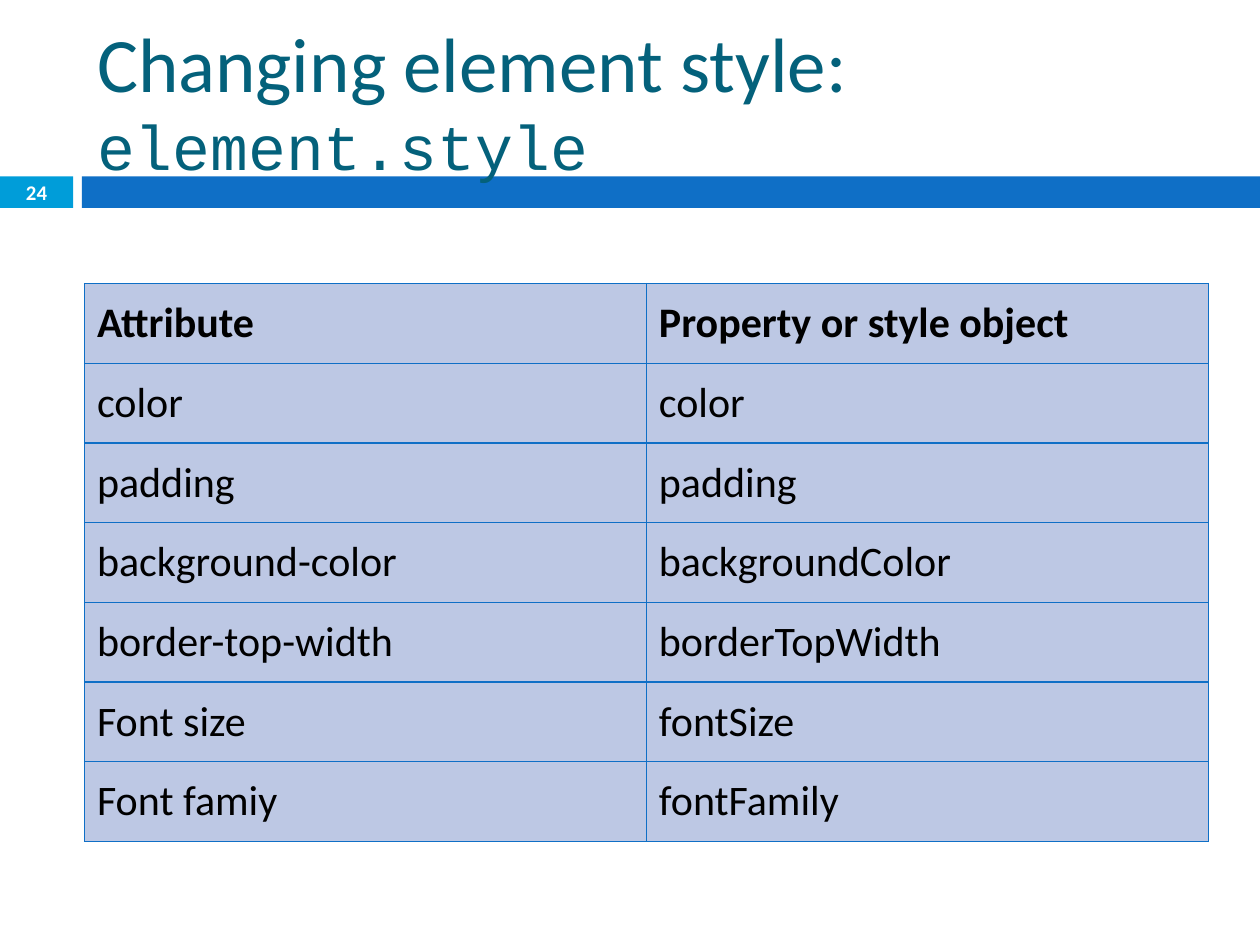
import lxml.etree
import pptx
import pptx.dml.color
import pptx.enum.shapes
import pptx.enum.text
import pptx.oxml.ns
import pptx.util

Inches = pptx.util.Inches
Pt = pptx.util.Pt
MIDDLE = pptx.enum.text.MSO_ANCHOR.MIDDLE

COLORS = {
    "title": "04617B",
    "number": "009DD9",
    "band": "0F6FC6",
    "cell": "BDC8E4",
    "text": "000000",
    "white": "FFFFFF",
}

STYLE_ROWS = [
    ("Attribute", "Property or style object"),
    ("color", "color"),
    ("padding", "padding"),
    ("background-color", "backgroundColor"),
    ("border-top-width", "borderTopWidth"),
    ("Font size", "fontSize"),
    ("Font famiy", "fontFamily"),
]


def rgb(name):
    return pptx.dml.color.RGBColor.from_string(COLORS[name])


def set_font(font, size, color, bold=False, face="Calibri"):
    font.name, font.size, font.bold = face, Pt(size), bold
    font.color.rgb = rgb(color)


def add_bar(slide, left, top, width, height, color):
    bar = slide.shapes.add_shape(
        pptx.enum.shapes.MSO_SHAPE.RECTANGLE, left, top, width, height)
    bar.shadow.inherit = False
    bar.fill.solid()
    bar.fill.fore_color.rgb = rgb(color)
    bar.line.fill.background()
    return bar


def add_band(slide, left, top, width, height):
    """Page number box, a gap, then the long bar."""
    number_width, bar_offset = Inches(0.58), Inches(0.65)
    number = add_bar(slide, left, top, number_width, height, "number")
    add_bar(slide, left + bar_offset, top, width - bar_offset, height, "band")

    frame = number.text_frame
    frame.margin_left = frame.margin_right = 0
    frame.margin_top = frame.margin_bottom = 0
    frame.vertical_anchor = MIDDLE
    paragraph = frame.paragraphs[0]
    paragraph.text = "24"
    paragraph.alignment = pptx.enum.text.PP_ALIGN.CENTER
    set_font(paragraph.font, 11.9, "white", bold=True)


def place_title(slide, left, top, width, height):
    title = slide.shapes.title
    title.left, title.top, title.width, title.height = left, top, width, height
    # The title overlaps the band, so it goes in front
    title.element.getparent().append(title.element)

    frame = title.text_frame
    frame.word_wrap = True
    frame.auto_size = pptx.enum.text.MSO_AUTO_SIZE.NONE
    frame.vertical_anchor = MIDDLE
    paragraph = frame.paragraphs[0]
    paragraph.alignment = pptx.enum.text.PP_ALIGN.LEFT
    for text, size, face in (("Changing element style: ", 44, "Calibri"),
                             ("element.style", 36, "Courier New")):
        run = paragraph.add_run()
        run.text = text
        set_font(run.font, size, "title", face=face)


def set_borders(cell):
    qn = pptx.oxml.ns.qn
    properties = cell._tc.get_or_add_tcPr()
    for position, side in enumerate(("lnL", "lnR", "lnT", "lnB")):
        line = lxml.etree.Element(qn("a:" + side), w=str(Pt(0.79)))
        fill = lxml.etree.SubElement(line, qn("a:solidFill"))
        lxml.etree.SubElement(fill, qn("a:srgbClr"), val=COLORS["band"])
        properties.insert(position, line)


def add_style_table(slide, left, top, width, height):
    columns = len(STYLE_ROWS[0])
    table = slide.shapes.add_table(
        len(STYLE_ROWS), columns, left, top, width, height).table
    table.horz_banding = False
    for r, row in enumerate(STYLE_ROWS):
        for c, text in enumerate(row):
            cell = table.cell(r, c)
            cell.fill.solid()
            cell.fill.fore_color.rgb = rgb("cell")
            cell.vertical_anchor = MIDDLE
            paragraph = cell.text_frame.paragraphs[0]
            paragraph.text = text
            set_font(paragraph.font, 24, "text", bold=(r == 0))
            set_borders(cell)


def main():
    deck = pptx.Presentation()
    deck.slide_width, deck.slide_height = Inches(10), Inches(7.5)
    slide = deck.slides.add_slide(deck.slide_layouts[5])
    content_left, content_width = Inches(0.67), Inches(8.92)

    # Band under the title
    add_band(slide, 0, Inches(1.4), deck.slide_width, Inches(0.25))
    # Title
    place_title(slide, content_left, Inches(0.25), content_width, Inches(1.08))
    # Attributes and their style properties
    add_style_table(slide, content_left, Inches(2.25), content_width, Inches(4.43))

    deck.save("out.pptx")


if __name__ == "__main__":
    main()
